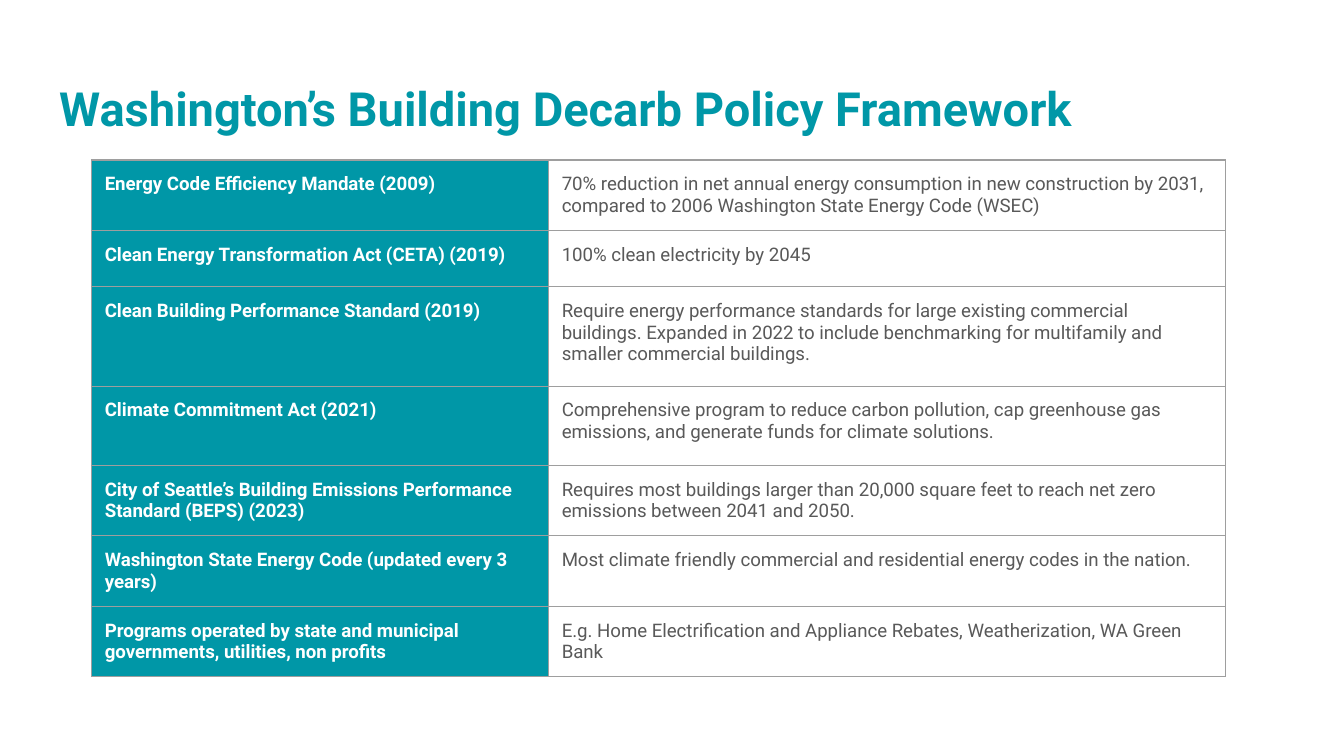
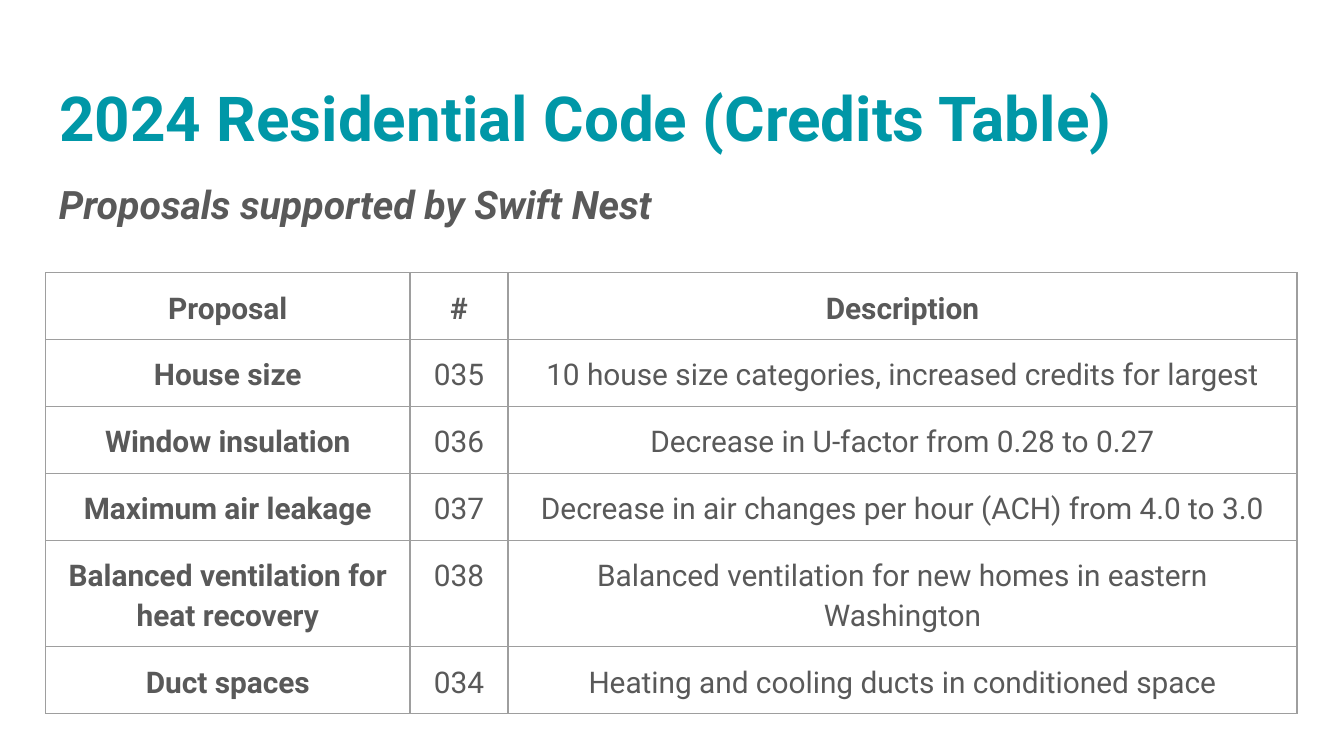
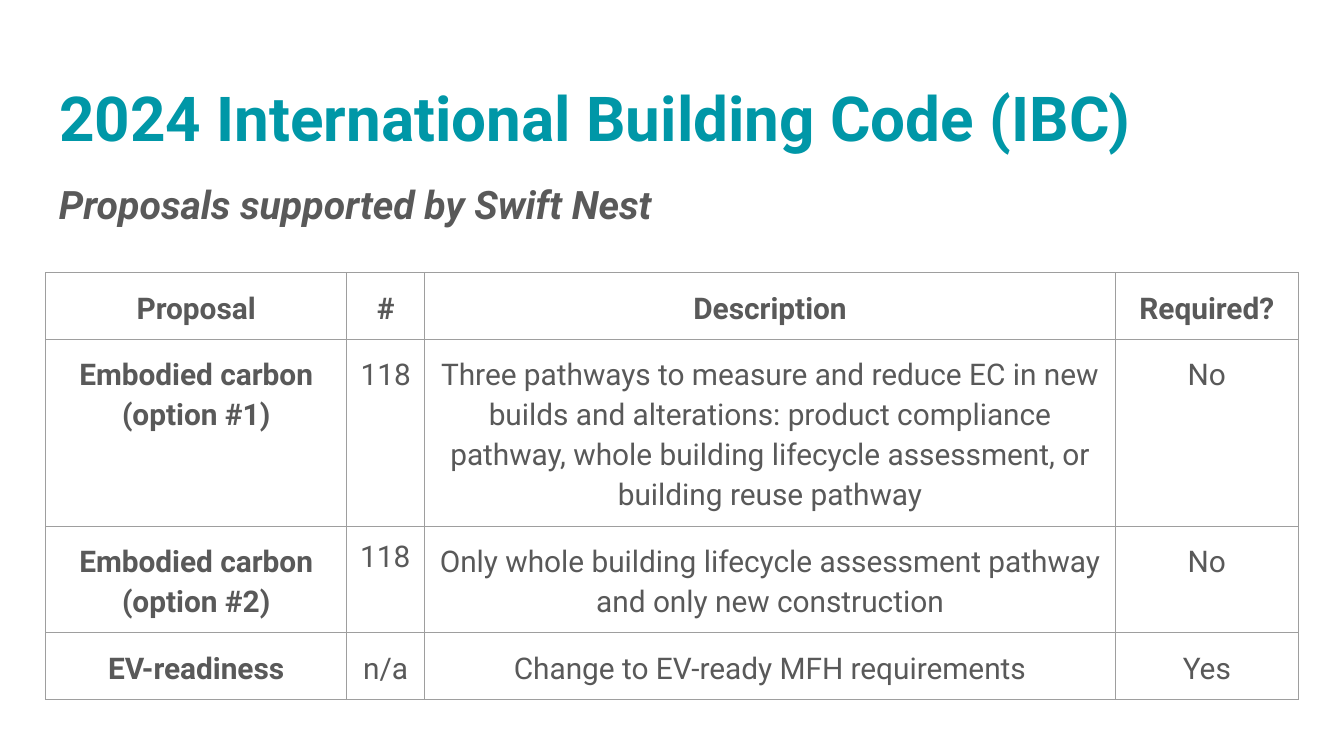
from dataclasses import dataclass

import pptx
import pptx.dml.color
import pptx.enum.text
import pptx.oxml
import pptx.oxml.ns
import pptx.util

Inches = pptx.util.Inches
Pt = pptx.util.Pt
ALIGN = pptx.enum.text.PP_ALIGN
ANCHOR = pptx.enum.text.MSO_ANCHOR
AUTO_SIZE = pptx.enum.text.MSO_AUTO_SIZE


@dataclass(frozen=True)
class Theme:
    font: str = "Roboto"
    teal: str = "0097A7"
    grey: str = "595959"
    white: str = "FFFFFF"
    border: str = "9E9E9E"
    border_width: float = 0.75
    title: float = 33.2
    long_title: float = 25.2
    subtitle: float = 21
    proposal: float = 16
    policy: float = 10
    inset: float = 0.1
    row_height: float = 0.42


THEME = Theme()
TITLE_BOX = (0.34, 0.49, 9.32, 0.63)
SUBTITLE_BOX = (0.34, 1.24, 7.88, 0.56)
POLICY_BOX = (0.68, 1.19, 8.44, 3.87)
SUBTITLE = "Proposals supported by Swift Nest"

POLICIES = [
    ("Energy Code Efficiency Mandate (2009)",
     "70% reduction in net annual energy consumption in new construction by 2031, "
     "compared to 2006 Washington State Energy Code (WSEC)"),
    ("Clean Energy Transformation Act (CETA) (2019)",
     "100% clean electricity by 2045"),
    ("Clean Building Performance Standard (2019)",
     "Require energy performance standards for large existing commercial buildings. "
     "Expanded in 2022 to include benchmarking for multifamily and smaller "
     "commercial buildings."),
    ("Climate Commitment Act (2021)",
     "Comprehensive program to reduce carbon pollution, cap greenhouse gas "
     "emissions, and generate funds for climate solutions."),
    ("City of Seattle’s Building Emissions Performance Standard (BEPS) (2023)",
     "Requires most buildings larger than 20,000 square feet to reach net zero "
     "emissions between 2041 and 2050."),
    ("Washington State Energy Code (updated every 3 years)",
     "Most climate friendly commercial and residential energy codes in the nation."),
    ("Programs operated by state and municipal governments, utilities, non profits",
     "E.g. Home Electrification and Appliance Rebates, Weatherization, WA Green Bank"),
]
POLICY_ROW_HEIGHTS = {2: 0.74, 3: 0.59}

RESIDENTIAL = [
    ("Proposal", "#", "Description"),
    ("House size", "035", "10 house size categories, increased credits for largest"),
    ("Window insulation", "036", "Decrease in U-factor from 0.28 to 0.27"),
    ("Maximum air leakage", "037",
     "Decrease in air changes per hour (ACH) from 4.0 to 3.0"),
    ("Balanced ventilation for heat recovery", "038",
     "Balanced ventilation for new homes in eastern Washington"),
    ("Duct spaces", "034", "Heating and cooling ducts in conditioned space"),
]

BUILDING = [
    ("Proposal", "#", "Description", "Required?"),
    ("Embodied carbon (option #1)", "118",
     "Three pathways to measure and reduce EC in new builds and alterations: "
     "product compliance pathway, whole building lifecycle assessment, or building "
     "reuse pathway", "No"),
    ("Embodied carbon (option #2)", "118",
     "Only whole building lifecycle assessment pathway and only new construction",
     "No"),
    ("EV-readiness", "n/a", "Change to EV-ready MFH requirements", "Yes"),
]


def inches(box):
    return [Inches(length) for length in box]


def rgb(color):
    return pptx.dml.color.RGBColor.from_string(color)


def set_margins(holder):
    holder.margin_left = holder.margin_right = Inches(THEME.inset)
    holder.margin_top = holder.margin_bottom = Inches(THEME.inset)


def write(frame, text, size, color, bold=False, italic=False,
          align=ALIGN.LEFT, spacing=1.0):
    frame.text = text
    para = frame.paragraphs[0]
    para.alignment = align
    para.line_spacing = spacing
    for span in para.runs:
        span.font.name = THEME.font
        span.font.size = Pt(size)
        span.font.bold = bold
        span.font.italic = italic
        span.font.color.rgb = rgb(color)


def format_frame(frame, auto_size):
    set_margins(frame)
    frame.word_wrap = True
    frame.auto_size = auto_size
    frame.vertical_anchor = ANCHOR.TOP


def add_page(deck, title, size):
    page = deck.slides.add_slide(deck.slide_layouts[5])
    holder = page.shapes.title
    holder.left, holder.top, holder.width, holder.height = inches(TITLE_BOX)
    format_frame(holder.text_frame, AUTO_SIZE.NONE)
    write(holder.text_frame, title, size, THEME.teal, bold=True)
    return page


def add_subtitle(page, box):
    shape = page.shapes.add_textbox(*inches(box))
    format_frame(shape.text_frame, AUTO_SIZE.SHAPE_TO_FIT_TEXT)
    write(shape.text_frame, SUBTITLE, THEME.subtitle, THEME.grey, bold=True, italic=True)


def outline(cell):
    properties = cell._tc.get_or_add_tcPr()
    for side in ("lnL", "lnR", "lnT", "lnB"):
        properties.append(pptx.oxml.parse_xml(
            f'<a:{side} {pptx.oxml.ns.nsdecls("a")} w="{Pt(THEME.border_width)}">'
            f'<a:solidFill><a:srgbClr val="{THEME.border}"/></a:solidFill></a:{side}>'))


def add_grid(page, box, widths, rows, format_cell, row_heights=None):
    """Add a bordered table; format_cell(cell, text, row, column) styles each cell."""
    holder = page.shapes.add_table(len(rows), len(widths), *inches(box))
    table = holder.table
    table.first_row = table.horz_banding = False
    for column, width in zip(table.columns, widths):
        column.width = Inches(width)
    for r, texts in enumerate(rows):
        table.rows[r].height = Inches((row_heights or {}).get(r, THEME.row_height))
        for c, text in enumerate(texts):
            cell = table.cell(r, c)
            set_margins(cell)
            outline(cell)
            cell.fill.background()
            format_cell(cell, text, r, c)
    holder.height = Inches(box[3])


def format_policy(cell, text, row, column):
    is_name = column == 0
    if is_name:
        cell.fill.solid()
        cell.fill.fore_color.rgb = rgb(THEME.teal)
    write(cell.text_frame, text, THEME.policy,
          THEME.white if is_name else THEME.grey, bold=is_name)


def format_proposal(cell, text, row, column):
    write(cell.text_frame, text, THEME.proposal, THEME.grey,
          bold=row == 0 or column == 0, align=ALIGN.CENTER, spacing=1.15)


def format_building(cell, text, row, column):
    if (row, column) == (2, 1):
        write(cell.text_frame, text, THEME.proposal, THEME.grey)
    else:
        format_proposal(cell, text, row, column)


def add_policy_page(deck):
    page = add_page(deck, "Washington’s Building Decarb Policy Framework",
                    THEME.long_title)
    add_grid(page, POLICY_BOX, (3.4, 5.04), POLICIES, format_policy,
             POLICY_ROW_HEIGHTS)


def add_proposal_page(deck, title, widths, rows, height, format_cell=format_proposal):
    page = add_page(deck, title, THEME.title)
    add_grid(page, (0.34, 2.03, 9.32, height), widths, rows, format_cell)
    add_subtitle(page, SUBTITLE_BOX)


def main():
    deck = pptx.Presentation()
    deck.slide_width = Inches(10)
    deck.slide_height = deck.slide_width * 9 // 16
    add_policy_page(deck)
    add_proposal_page(deck, "2024 Residential Code (Credits Table)",
                      (2.71, 0.73, 5.87), RESIDENTIAL, 3.22)
    add_proposal_page(deck, "2024 International Building Code (IBC)",
                      (2.24, 0.58, 5.14, 1.36), BUILDING, 3.17, format_building)
    deck.save("out.pptx")


if __name__ == "__main__":
    main()
